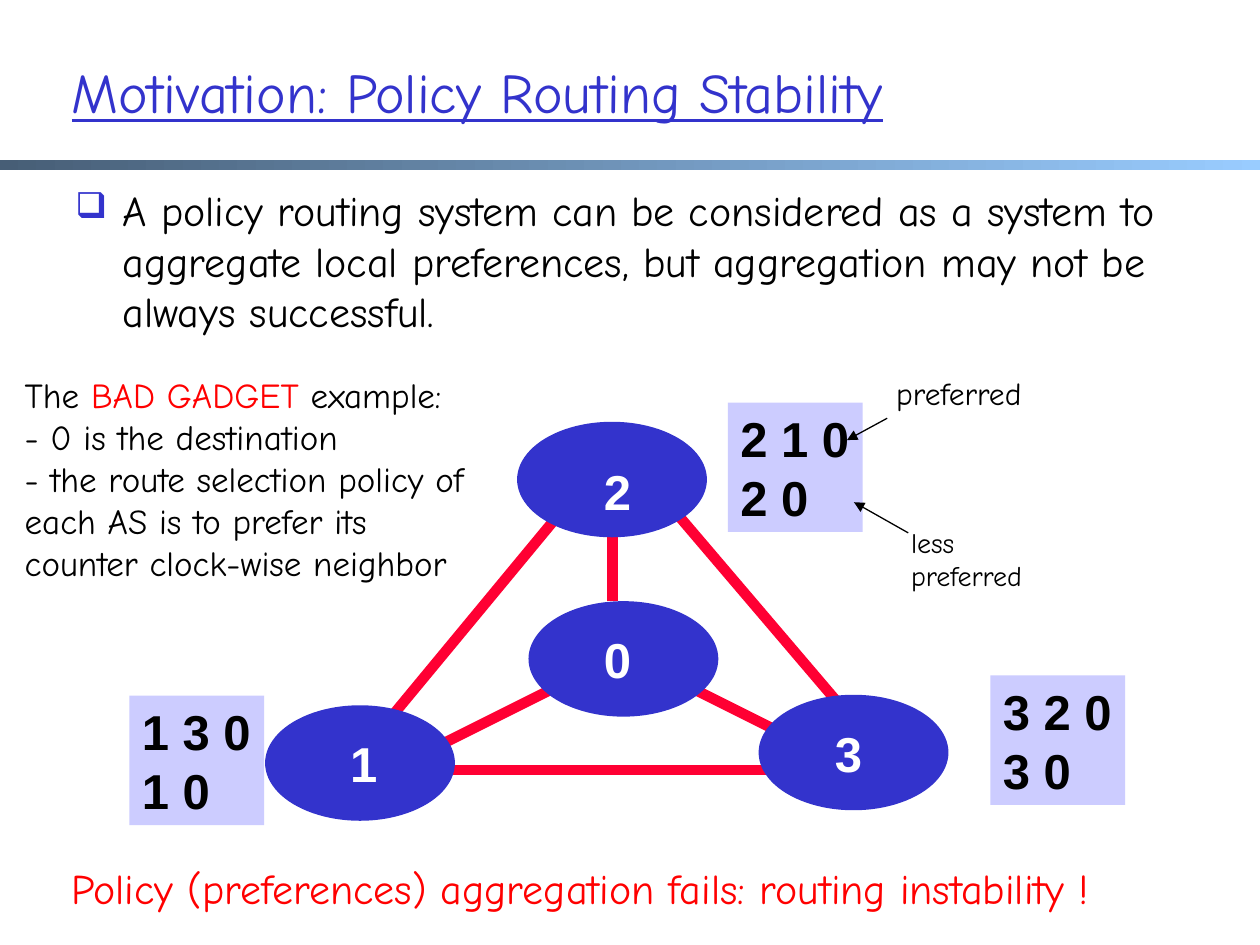
from dataclasses import dataclass

from lxml.etree import SubElement
from pptx import Presentation
from pptx.dml.color import RGBColor as Color
from pptx.enum.shapes import MSO_CONNECTOR as Connector, MSO_SHAPE as Shape
from pptx.enum.text import MSO_ANCHOR as Anchor, MSO_AUTO_SIZE as AutoSize
from pptx.oxml.ns import qn
from pptx.util import Pt


@dataclass(frozen=True)
class Theme:
    blue: str = "3333CC"
    pale: str = "CCCCFF"
    link: str = "FF0033"
    red: str = "FF0000"
    black: str = "000000"
    white: str = "FFFFFF"
    bar_start: str = "475E76"
    bar_end: str = "99CCFF"
    hand: str = "Comic Neue"
    sans: str = "Arial"
    title: int = 32
    number: int = 28
    body: int = 24
    note: int = 20
    label: int = 18
    small: int = 16


THEME = Theme()
NODE_SIZE = (107.5, 65)
LABEL_SIZE = (30, 41)
CHOICE_SIZE = (77, 74)


def rgb(value):
    return Color.from_string(value)


def fill_text(shape, paragraphs, size, color=THEME.black, font=THEME.hand,
              bold=False, underline=False, wrap=False, grow=True):
    frame = shape.text_frame
    frame.word_wrap = wrap
    frame.auto_size = AutoSize.SHAPE_TO_FIT_TEXT if grow else AutoSize.NONE
    frame.vertical_anchor = Anchor.TOP
    for index, runs in enumerate(paragraphs):
        para = frame.paragraphs[0] if index == 0 else frame.add_paragraph()
        for words, run_color in runs:
            span = para.add_run()
            span.text = words
            span.font.name = font
            span.font.size = Pt(size)
            span.font.bold = bold
            span.font.underline = underline
            span.font.color.rgb = rgb(run_color or color)
    return frame


def plain(*lines):
    return [[(line, None)] for line in lines]


def add_text(page, area, paragraphs, size, **style):
    box = page.shapes.add_textbox(*map(Pt, area))
    return fill_text(box, paragraphs, size, **style)


def add_solid(page, kind, area, color):
    shape = page.shapes.add_shape(kind, *map(Pt, area))
    shape.shadow.inherit = False
    shape.fill.solid()
    shape.fill.fore_color.rgb = rgb(color)
    shape.line.fill.background()
    return shape


def add_line(page, start, end, color, width, arrow=False):
    line = page.shapes.add_connector(Connector.STRAIGHT, *map(Pt, start + end))
    line.line.color.rgb = rgb(color)
    line.line.width = Pt(width)
    properties = line._element.spPr
    if arrow:
        SubElement(properties.find(qn("a:ln")), qn("a:tailEnd"), type="triangle")
    SubElement(properties, qn("a:effectLst"))


def add_node(page, number, corner, label_corner):
    node = add_solid(page, Shape.OVAL, corner + NODE_SIZE, THEME.blue)
    node.line.color.rgb = rgb(THEME.blue)
    node.line.width = Pt(1)
    add_text(page, label_corner + LABEL_SIZE, plain(number), THEME.number,
             color=THEME.white, font=THEME.sans, bold=True)


def add_choices(page, corner, *routes):
    box = add_solid(page, Shape.RECTANGLE, corner + CHOICE_SIZE, THEME.pale)
    frame = fill_text(box, plain(*routes), THEME.number, font=THEME.sans, bold=True)
    for para in frame.paragraphs:
        para.alignment = 1


def add_header(page):
    bar = add_solid(page, Shape.RECTANGLE, (0, 91.5, 720, 5.5), THEME.bar_start)
    bar.fill.gradient()
    bar.fill.gradient_angle = 0
    for stop, color in zip(bar.fill.gradient_stops, (THEME.bar_start, THEME.bar_end)):
        stop.color.rgb = rgb(color)
    frame = add_text(page, (34, 20, 649, 64),
                     plain("Motivation: Policy Routing Stability"), THEME.title,
                     color=THEME.blue, underline=True, wrap=True, grow=False)
    frame.vertical_anchor = Anchor.MIDDLE


def add_bullet(page, area, words):
    frame = add_text(page, area, plain(words), THEME.body, wrap=True, grow=False)
    para = frame.paragraphs[0]
    para.space_before = Pt(4.8)
    properties = para._p.get_or_add_pPr()
    properties.set("marL", str(Pt(27)))
    properties.set("indent", str(Pt(-27)))
    SubElement(SubElement(properties, qn("a:buClr")), qn("a:srgbClr"), val=THEME.blue)
    SubElement(properties, qn("a:buSzPct"), val="85000")
    SubElement(properties, qn("a:buChar"), char="❑")


def add_gadget(page):
    links = [
        ((506, 433.5), (368, 271.5)),
        ((338, 271.5), (194, 445.5)),
        ((350, 253.5), (350, 343.5)),
        ((344, 379.5), (248, 427.5)),
        ((464, 427.5), (392, 391.5)),
        ((518, 440), (194, 440)),
    ]
    for start, end in links:
        add_line(page, start, end, THEME.link, 6)

    nodes = [
        ("2", (296, 241.5), (338, 260)),
        ("0", (302.5, 344), (338, 356)),
        ("3", (434, 397.5), (470, 410)),
        ("1", (152, 403.5), (193, 415.5)),
    ]
    for node in nodes:
        add_node(page, *node)

    add_choices(page, (416, 230), "2 1 0", "2 0")
    add_choices(page, (74, 397.5), "1 3 0", "1 0")
    add_choices(page, (566, 386), "3 2 0", "3 0")


def add_notes(page):
    add_line(page, (507, 239), (484, 251.5), THEME.black, 0.75, arrow=True)
    add_text(page, (505, 210, 99, 29), plain("preferred"), THEME.label)
    add_text(page, (513.5, 296.5, 90, 46), plain("less", "preferred"), THEME.small)
    add_line(page, (519, 304.5), (488, 287), THEME.black, 0.75, arrow=True)
    example = [[("The ", None), ("BAD GADGET", THEME.red), (" example:", None)]]
    example += plain(
        "- 0 is the destination",
        "- the route selection policy of each AS is to prefer its "
        "counter clock-wise neighbor")
    add_text(page, (7, 210, 278, 127.5), example, THEME.note, wrap=True)
    add_text(page, (34, 489.5, 667.5, 36),
             plain("Policy (preferences) aggregation fails: routing instability !"),
             THEME.body, color=THEME.red)


def main():
    deck = Presentation()
    deck.slide_width, deck.slide_height = Pt(720), Pt(540)
    page = deck.slides.add_slide(deck.slide_layouts[6])
    add_header(page)
    add_gadget(page)
    add_notes(page)
    add_bullet(page, (36, 102, 634, 382),
               "A policy routing system can be considered as a system to aggregate "
               "local preferences, but aggregation may not be always successful.")
    deck.save("out.pptx")


if __name__ == "__main__":
    main()
